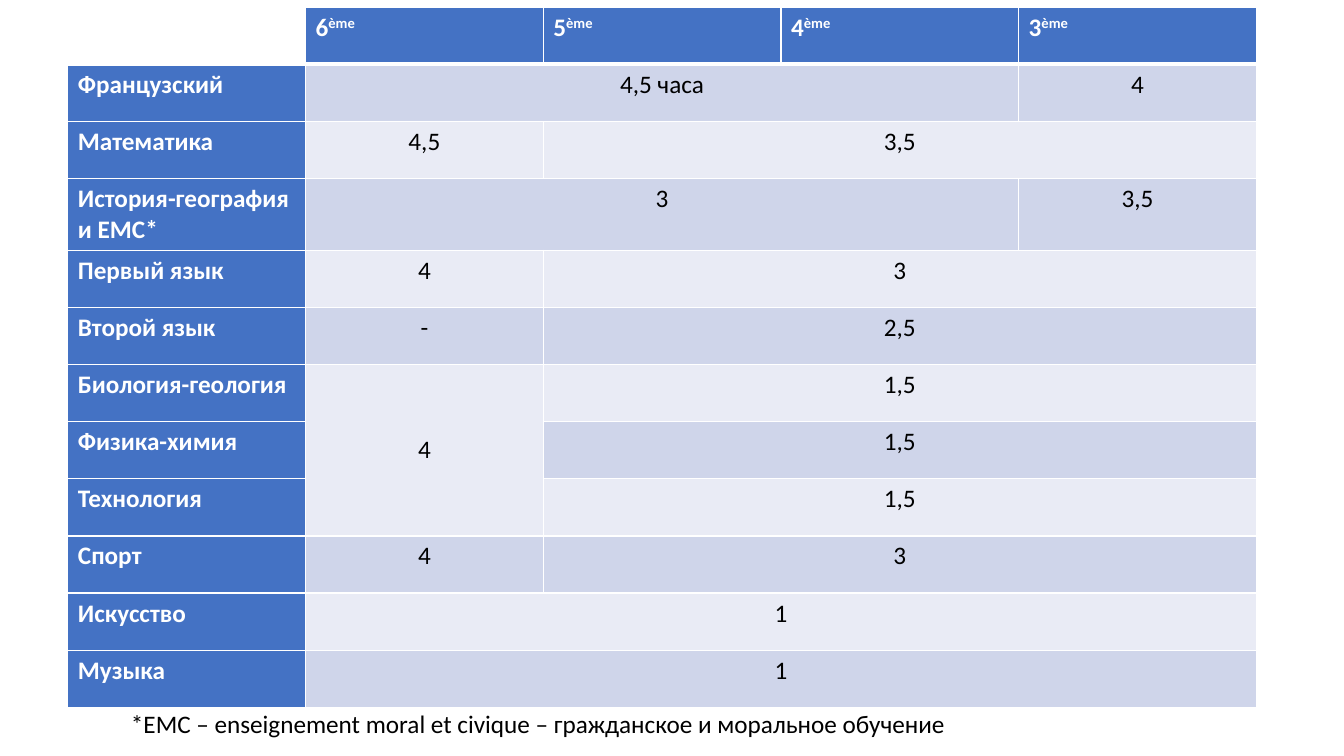
from lxml.etree import SubElement
from pptx import Presentation
from pptx.dml.color import RGBColor
from pptx.enum.text import MSO_ANCHOR as ANCHOR, MSO_AUTO_SIZE as AUTO, PP_ALIGN as ALIGN
from pptx.oxml.ns import qn
from pptx.util import Cm, Pt

GRADES = ["6", "5", "4", "3"]
SUBJECTS = [
    ("Французский", [("4,5 часа", 1, 3), ("4", 4, 1)]),
    ("Математика", [("4,5", 1, 1), ("3,5", 2, 3)]),
    ("История-география и EMC*", [("3", 1, 3), ("3,5", 4, 1)]),
    ("Первый язык", [("4", 1, 1), ("3", 2, 3)]),
    ("Второй язык", [("-", 1, 1), ("2,5", 2, 3)]),
    ("Биология-геология", [("4", 1, 1), ("1,5", 2, 3)]),
    ("Физика-химия", [("1,5", 2, 3)]),
    ("Технология", [("1,5", 2, 3)]),
    ("Спорт", [("4", 1, 1), ("3", 2, 3)]),
    ("Искусство", [("1", 1, 4)]),
    ("Музыка", [("1", 1, 4)]),
]
SCIENCE_ROWS = (6, 8)
FOOTNOTE = "*EMC – enseignement moral et civique – гражданское и моральное обучение"
BLUE, BANDS = "4472C4", ("E9EBF5", "CFD5EA")
WHITE, BLACK = "FFFFFF", "000000"
COL_W, ROW_H, TALL_ROW_H = 5.99, 1.44, 1.8
TALL_ROW = 3


def rgb(value):
    return RGBColor.from_string(value)


def add_text(p, text, color=BLACK, bold=False, align=ALIGN.LEFT, raised=False):
    p.alignment = align
    r = p.add_run()
    r.text = text
    r.font.name, r.font.size, r.font.bold = "Calibri", Pt(18), bold
    r.font.color.rgb = rgb(color)
    if raised:
        r._r.get_or_add_rPr().set("baseline", "30000")


def style_cell(cell, row, col):
    tc_pr = cell._tc.get_or_add_tcPr()
    for side in "LRTB":
        heavy = (row, side) in ((0, "B"), (1, "T"))
        ln = SubElement(tc_pr, qn(f"a:ln{side}"), w=str(Pt(3 if heavy else 1)))
        fill = SubElement(ln, qn("a:solidFill"))
        SubElement(fill, qn("a:srgbClr"), val=WHITE)
    if row == col == 0:
        cell.fill.background()
    else:
        cell.fill.solid()
        cell.fill.fore_color.rgb = rgb(BLUE if row == 0 or col == 0 else BANDS[row % 2])


def add_timetable(s):
    n_rows, n_cols = len(SUBJECTS) + 1, len(GRADES) + 1
    frame = s.shapes.add_table(n_rows, n_cols, Cm(1.71), Cm(0.18),
                               Cm(COL_W * n_cols), Cm(ROW_H * n_rows))
    table = frame.table
    table.first_row = table.horz_banding = False
    for column in table.columns:
        column.width = Cm(COL_W)
    for i, row in enumerate(table.rows):
        row.height = Cm(TALL_ROW_H if i == TALL_ROW else ROW_H)
        for j in range(n_cols):
            style_cell(table.cell(i, j), i, j)
    for j, grade in enumerate(GRADES, 1):
        p = table.cell(0, j).text_frame.paragraphs[0]
        add_text(p, grade, color=WHITE, bold=True)
        add_text(p, "ème", color=WHITE, bold=True, raised=True)
    first, last = SCIENCE_ROWS
    for i, (subject, hours) in enumerate(SUBJECTS, 1):
        add_text(table.cell(i, 0).text_frame.paragraphs[0], subject, color=WHITE, bold=True)
        for text, col, span in hours:
            cell = table.cell(i, col)
            if span > 1:
                cell.merge(table.cell(i, col + span - 1))
            add_text(cell.text_frame.paragraphs[0], text, align=ALIGN.CENTER)
    science = table.cell(first, 1)
    science.merge(table.cell(last, 1))
    science.vertical_anchor = ANCHOR.MIDDLE


def add_footnote(s):
    tf = s.shapes.add_textbox(Cm(3.05), Cm(17.73), Cm(27.79), Cm(1.02)).text_frame
    tf.word_wrap = True
    tf.auto_size = AUTO.SHAPE_TO_FIT_TEXT
    add_text(tf.paragraphs[0], FOOTNOTE)


def main():
    """Build the slide with weekly school hours by subject and grade."""
    prs = Presentation()
    prs.slide_width, prs.slide_height = Cm(33.87), Cm(19.05)
    s = prs.slides.add_slide(prs.slide_layouts[6])
    add_timetable(s)
    add_footnote(s)
    prs.save("out.pptx")


if __name__ == "__main__":
    main()
